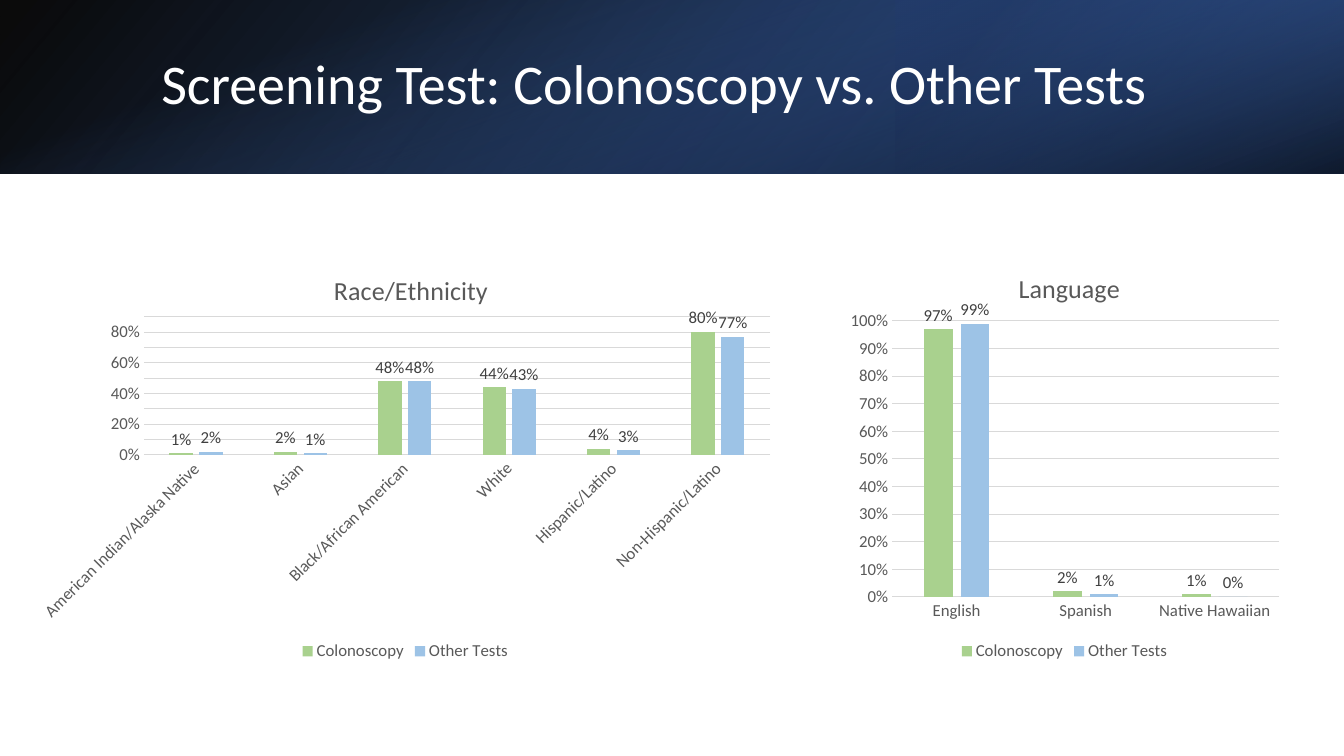
from lxml import etree
from pptx import Presentation, util as u
from pptx.chart.data import CategoryChartData
from pptx.dml.color import RGBColor
from pptx.enum import chart as ch, shapes, text
from pptx.oxml import parse_xml
from pptx.oxml.ns import nsdecls, qn

COLORS = {
    "white": "FFFFFF", "axis": "595959", "grid": "D9D9D9", "label": "404040",
    "Colonoscopy": "A9D18E", "Other Tests": "9DC3E6",
}


def style_font(font, size, color):
    font.name, font.size, font.bold = "Calibri", u.Pt(size), False
    font.color.rgb = RGBColor.from_string(COLORS[color])


def place_in_chart(element, index, **fractions):
    """Fix a chart part at fractions of the chart's width and height."""
    for old in element.findall(qn("c:layout")):
        element.remove(old)
    modes = '<c:xMode val="edge"/><c:yMode val="edge"/>'
    if "w" in fractions:
        modes = '<c:layoutTarget val="inner"/>' + modes
    sizes = "".join(f'<c:{key} val="{value}"/>' for key, value in fractions.items())
    element.insert(index, parse_xml(
        f'<c:layout {nsdecls("c")}><c:manualLayout>{modes}{sizes}</c:manualLayout></c:layout>'))


prs = Presentation()
prs.slide_width, prs.slide_height = u.Pt(960), u.Pt(540)
slide = prs.slides.add_slide(prs.slide_layouts[5])

# Header band: three overlaid gradients
# left, top, width, height, rotation, flipped, angle, stops (position, colour, opacity)
BAND = 124
layers = [
    (0, 0, 960, BAND, 0, True, 140, [(0, "000000", 96), (100, "2F5597", 100)]),
    (640, 0, 320, BAND, 180, True, 320, [(19, "203864", 68), (100, "4472C4", 79)]),
    (480 - BAND / 2, BAND / 2 - 480, BAND, 960, 90, False, 340,
     [(23, "4472C4", 0), (99, "000000", 74)]),
]
for left, top, width, height, rotation, flipped, angle, stops in layers:
    layer = slide.shapes.add_shape(
        shapes.MSO_SHAPE.RECTANGLE, u.Pt(left), u.Pt(top), u.Pt(width), u.Pt(height))
    layer.rotation = rotation
    layer.shadow.inherit = False
    layer.line.fill.background()
    properties = layer._element.spPr
    if flipped:
        properties.find(qn("a:xfrm")).set("flipH", "1")
    stop_xml = "".join(
        f'<a:gs pos="{position * 1000}"><a:srgbClr val="{color}">'
        f'<a:alpha val="{opacity * 1000}"/></a:srgbClr></a:gs>'
        for position, color, opacity in stops)
    properties.insert(2, parse_xml(
        f'<a:gradFill {nsdecls("a")} rotWithShape="1"><a:gsLst>{stop_xml}</a:gsLst>'
        f'<a:lin ang="{angle * 60000}" scaled="0"/></a:gradFill>'))

# Slide title, brought in front of the band
title = slide.shapes.title
slide.shapes._spTree.append(title._element)
title.left, title.top, title.width, title.height = u.Pt(108), u.Pt(27.4), u.Pt(790.6), u.Pt(69)
title.text_frame.vertical_anchor = text.MSO_ANCHOR.MIDDLE
heading = title.text_frame.paragraphs[0]
heading.alignment = text.PP_ALIGN.LEFT
heading.line_spacing = 0.9
run = heading.add_run()
run.text = "Screening Test: Colonoscopy vs. Other Tests"
style_font(run.font, 40, "white")

# Charts
comparisons = [
    dict(name="Race/Ethnicity", left=18, width=543, top_value=0.9, label_angle=-45,
         categories=["American Indian/Alaska Native", "Asian", "Black/African American",
                     "White", "Hispanic/Latino", "Non-Hispanic/Latino"],
         shares={"Colonoscopy": [0.01, 0.02, 0.48, 0.44, 0.04, 0.8],
                 "Other Tests": [0.02, 0.01, 0.48, 0.43, 0.03, 0.77]},
         title_at=dict(x=0.4, y=0.05),
         plot_at=dict(x=0.156, y=0.167, w=0.824, h=0.33)),
    dict(name="Language", left=600.5, width=319.7, top_value=1, label_angle=0,
         categories=["English", "Spanish", "Native Hawaiian"],
         shares={"Colonoscopy": [0.97, 0.02, 0.01], "Other Tests": [0.99, 0.01, 0]},
         title_at=dict(x=0.387, y=0.045),
         plot_at=dict(x=0.115, y=0.177, w=0.865, h=0.66)),
]
for comparison in comparisons:
    data = CategoryChartData(number_format="0%")
    data.categories = comparison["categories"]
    for test, values in comparison["shares"].items():
        data.add_series(test, values)
    chart = slide.shapes.add_chart(
        ch.XL_CHART_TYPE.COLUMN_CLUSTERED, u.Pt(comparison["left"]), u.Pt(176.4),
        u.Pt(comparison["width"]), u.Pt(298.8), data).chart
    style_font(chart.font, 12, "axis")

    # Chart title and legend
    chart.has_title = True
    run = chart.chart_title.text_frame.paragraphs[0].add_run()
    run.text = comparison["name"]
    style_font(run.font, 18.6, "axis")
    place_in_chart(chart.chart_title._element, 1, **comparison["title_at"])
    chart.has_legend = True
    chart.legend.position = ch.XL_LEGEND_POSITION.BOTTOM
    chart.legend.include_in_layout = False
    style_font(chart.legend.font, 12, "axis")

    # Axes
    shares_axis, groups_axis = chart.value_axis, chart.category_axis
    for axis in (shares_axis, groups_axis):
        axis.major_tick_mark = axis.minor_tick_mark = ch.XL_TICK_MARK.NONE
        style_font(axis.tick_labels.font, 12, "axis")
    shares_axis.minimum_scale, shares_axis.maximum_scale = 0, comparison["top_value"]
    shares_axis.major_unit = 0.1
    shares_axis.tick_labels.number_format = "0%"
    shares_axis.tick_labels.number_format_is_linked = False
    shares_axis.format.line.fill.background()
    for line in (shares_axis.major_gridlines.format.line, groups_axis.format.line):
        line.width = u.Pt(0.75)
        line.color.rgb = RGBColor.from_string(COLORS["grid"])
    label_body = groups_axis._element.find(qn("c:txPr")).find(qn("a:bodyPr"))
    label_body.set("rot", str(comparison["label_angle"] * 60000))
    label_body.set("vert", "horz")

    # Columns and their labels
    plot = chart.plots[0]
    plot.gap_width, plot.overlap, plot.vary_by_categories = 219, -27, False
    place_in_chart(plot._element.getparent(), 0, **comparison["plot_at"])
    for series in plot.series:
        series.format.fill.solid()
        series.format.fill.fore_color.rgb = RGBColor.from_string(COLORS[series.name])
        labels = series.data_labels
        labels.show_value = True
        labels.position = ch.XL_LABEL_POSITION.OUTSIDE_END
        labels.number_format, labels.number_format_is_linked = "0%", False
        style_font(labels.font, 12, "label")

prs.save("out.pptx")
